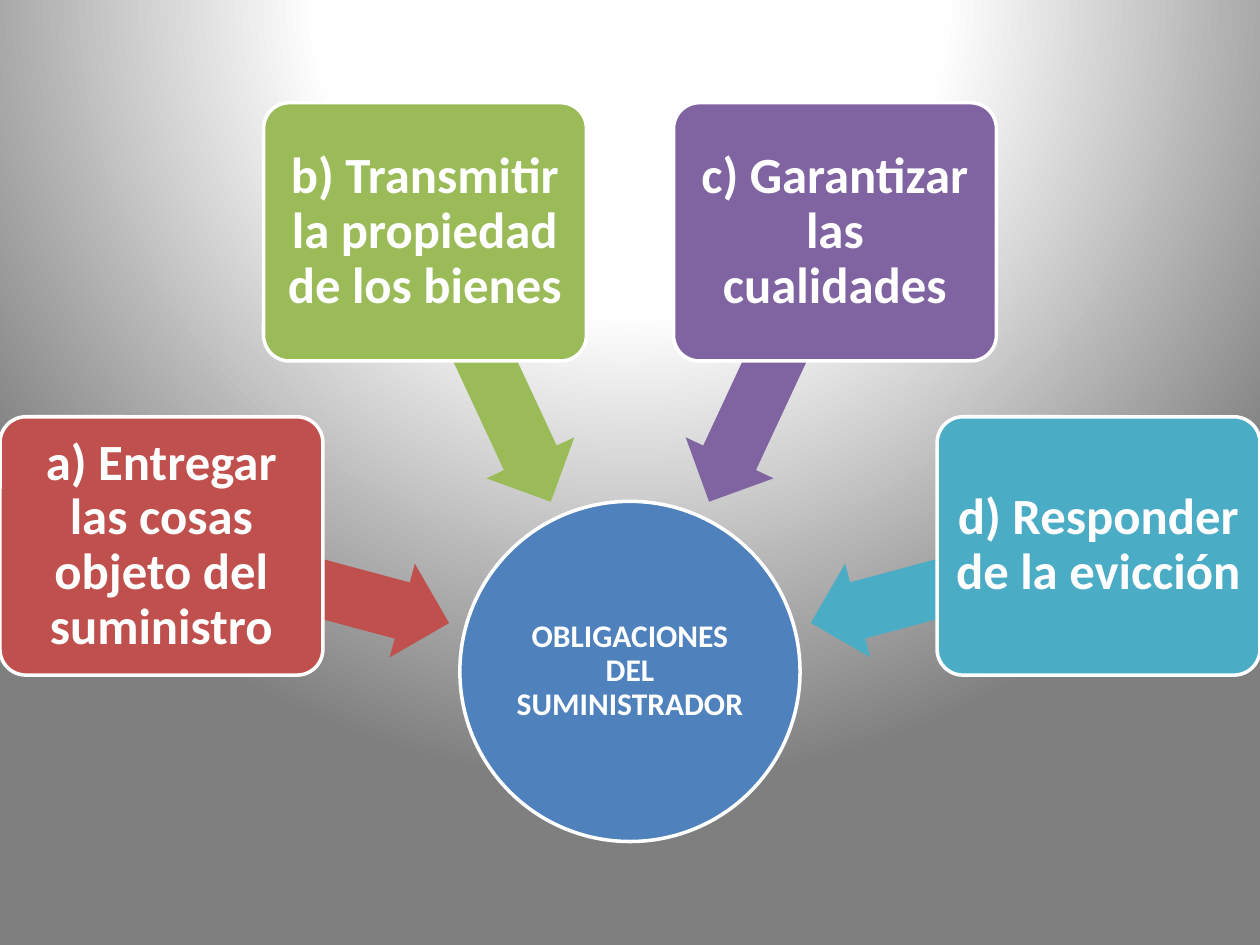
"""Build a radial slide: four supplier obligations pointing at a central hub."""
from math import cos, radians, sin

from pptx import Presentation
from pptx.dml.color import RGBColor
from pptx.enum.shapes import MSO_SHAPE
from pptx.enum.text import MSO_ANCHOR, PP_ALIGN
from pptx.oxml import parse_xml
from pptx.oxml.ns import nsdecls, qn
from pptx.util import Pt

OVAL, ROUNDED, ARROW = MSO_SHAPE.OVAL, MSO_SHAPE.ROUNDED_RECTANGLE, MSO_SHAPE.LEFT_ARROW
MIDDLE, CENTER = MSO_ANCHOR.MIDDLE, PP_ALIGN.CENTER
WHITE = "FFFFFF"
HUB_X, HUB_Y, HUB_SIZE = 360, 383.7, 194.4
BOX_RADIUS, BOX_WIDTH, BOX_HEIGHT = 277.2, 184.5, 147.6
ARROW_RADIUS, ARROW_LENGTH, ARROW_HEIGHT = 192, 170, 55.4
FIRST_ANGLE, ANGLE_STEP = 195, 50

BACKGROUND_STOPS = [(0, WHITE), (40, "FEFEFE"), (100, "7F7F7F")]
OBLIGATIONS = [
    ("a) Entregar las cosas objeto del suministro", "C0504D"),
    ("b) Transmitir la propiedad de los bienes", "9BBB59"),
    ("c) Garantizar las cualidades", "8064A2"),
    ("d) Responder de la evicción", "4BACC6"),
]


def add_centered(preset, angle, radius, width, height, color):
    center_x = HUB_X + radius * cos(radians(angle))
    center_y = HUB_Y + radius * sin(radians(angle))
    shape = slide.shapes.add_shape(
        preset, Pt(center_x - width / 2), Pt(center_y - height / 2), Pt(width), Pt(height))
    shape.shadow.inherit = False
    shape.fill.solid()
    shape.fill.fore_color.rgb = RGBColor.from_string(color)
    shape.line.fill.background()
    return shape


def label(shape, text, size, inset):
    shape.line.color.rgb = RGBColor.from_string(WHITE)
    shape.line.width = Pt(2)
    frame = shape.text_frame
    frame.word_wrap = True
    frame.vertical_anchor = MIDDLE
    frame.margin_left = frame.margin_right = Pt(inset)
    frame.margin_top = frame.margin_bottom = Pt(inset)
    paragraph = frame.paragraphs[0]
    paragraph.alignment = CENTER
    paragraph.line_spacing = 0.9
    run = paragraph.add_run()
    run.text = text
    run.font.name = "Calibri"
    run.font.size = Pt(size)
    run.font.bold = True
    run.font.color.rgb = RGBColor.from_string(WHITE)


deck = Presentation()
deck.slide_width, deck.slide_height = Pt(720), Pt(540)
slide = deck.slides.add_slide(deck.slide_layouts[6])

slide.background.fill.solid()
plain_fill = next(slide.background._cSld.iter(qn("a:solidFill")))
stops = "".join(
    f'<a:gs pos="{position * 1000}"><a:srgbClr val="{color}"/></a:gs>'
    for position, color in BACKGROUND_STOPS)
glow = parse_xml(
    f'<a:gradFill {nsdecls("a")} rotWithShape="1"><a:gsLst>{stops}</a:gsLst>'
    '<a:path path="circle"><a:fillToRect l="50000" t="-80000" r="50000" b="180000"/></a:path>'
    '</a:gradFill>')
plain_fill.getparent().replace(plain_fill, glow)

hub = add_centered(OVAL, 0, 0, HUB_SIZE, HUB_SIZE, "4F81BD")
label(hub, "OBLIGACIONES DEL SUMINISTRADOR", 18, 0.9)

for index, (obligation, color) in enumerate(OBLIGATIONS):
    angle = FIRST_ANGLE + index * ANGLE_STEP
    arrow = add_centered(ARROW, angle, ARROW_RADIUS, ARROW_LENGTH, ARROW_HEIGHT, color)
    arrow.rotation = angle
    arrow.adjustments[0] = 0.6
    arrow.adjustments[1] = 0.5
    box = add_centered(ROUNDED, angle, BOX_RADIUS, BOX_WIDTH, BOX_HEIGHT, color)
    box.adjustments[0] = 0.1
    label(box, obligation, 29, 4.35)

deck.save("out.pptx")
